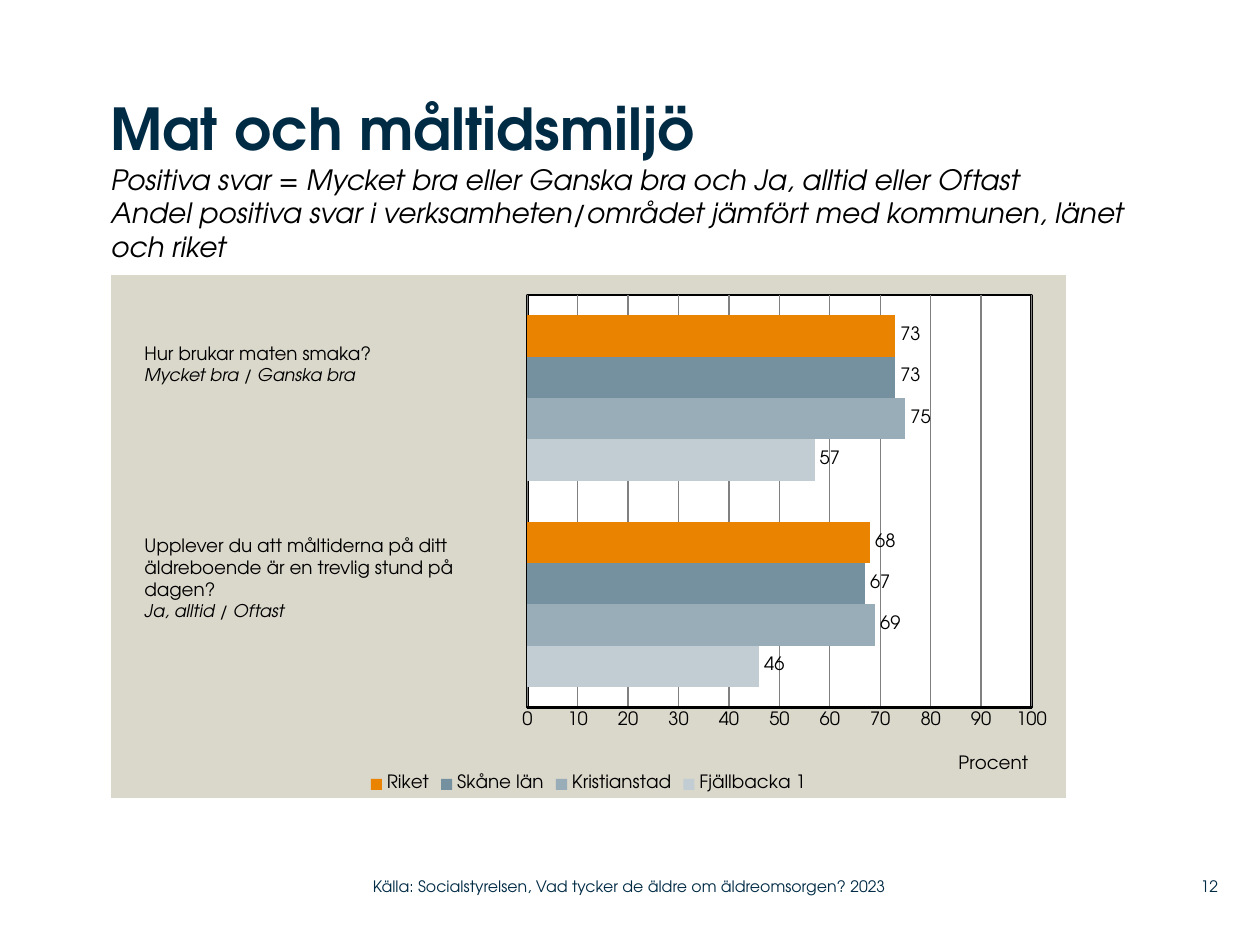
from lxml import etree
from pptx import Presentation, util as u
from pptx.chart.data import CategoryChartData
from pptx.dml.color import RGBColor
from pptx.enum import chart as ch, text
from pptx.oxml import parse_xml
from pptx.oxml.ns import nsdecls, qn

PX = u.Inches(1) // 126
FONT = "TeX Gyre Adventor"
NAVY, BLACK = "002B45", "000000"


def style(font, size, color=BLACK, bold=False, italic=False):
    font.name, font.size = FONT, u.Pt(size)
    font.bold, font.italic = bold, italic
    font.color.rgb = RGBColor.from_string(color)


def add_text(x, y, w, h, lines, inset=None, anchor=text.MSO_ANCHOR.TOP, align=None):
    """Add a box with one paragraph per (text, size, color, italic) line."""
    tf = s.shapes.add_textbox(x * PX, y * PX, w * PX, h * PX).text_frame
    tf.word_wrap, tf.vertical_anchor = True, anchor
    if inset is not None:
        tf.margin_left = tf.margin_right = tf.margin_top = tf.margin_bottom = inset
    for i, (line, size, color, italic) in enumerate(lines):
        p = tf.paragraphs[0] if i == 0 else tf.add_paragraph()
        p.text, p.alignment = line, align
        style(p.font, size, color, italic=italic)
    return tf


prs = Presentation()
prs.slide_width, prs.slide_height = 1260 * PX, 945 * PX
s = prs.slides.add_slide(prs.slide_layouts[6])

# Chart
series = [
    ("Fjällbacka 1", (46, 57), "C2CDD3"),
    ("Kristianstad", (69, 75), "99ADB9"),
    ("Skåne län", (67, 73), "75909F"),
    ("Riket", (68, 73), "E98300"),
]
data = CategoryChartData()
data.categories = ["1", "2"]
for name, values, _ in series:
    data.add_series(name, values)
chart = s.shapes.add_chart(ch.XL_CHART_TYPE.BAR_CLUSTERED, 111 * PX, 275 * PX,
                           955 * PX, 523 * PX, data).chart
style(chart.font, 10.5)
chart.has_title = False
chart.has_legend = True
chart.legend.position = ch.XL_LEGEND_POSITION.BOTTOM
chart.legend.include_in_layout = False
style(chart.legend.font, 10.5)

plot = chart.plots[0]
plot.gap_width, plot.overlap, plot.vary_by_categories = 100, 0, False
for ser, (_, _, color) in zip(plot.series, series):
    ser.format.fill.solid()
    ser.format.fill.fore_color.rgb = RGBColor.from_string(color)
    ser.data_labels.show_value = True
    ser.data_labels.position = ch.XL_LABEL_POSITION.OUTSIDE_END
    style(ser.data_labels.font, 10.5)

chart.category_axis.visible = False
axis = chart.value_axis
axis.minimum_scale, axis.maximum_scale, axis.major_unit = 0, 100, 10
axis.major_tick_mark = axis.minor_tick_mark = ch.XL_TICK_MARK.NONE
style(axis.tick_labels.font, 10.5)
axis.format.line.color.rgb = RGBColor.from_string(BLACK)
axis.format.line.width = u.Pt(2)
axis.has_major_gridlines = True
axis.major_gridlines.format.line.color.rgb = RGBColor.from_string("808080")
axis.major_gridlines.format.line.width = u.Pt(0.75)
axis.axis_title.text_frame.text = "Procent"
style(axis.axis_title.text_frame.paragraphs[0].font, 10.5)


def set_layout(parent, **values):
    """Give a chart part a manual layout, in fractions of the chart."""
    layout = parent.find(qn("c:layout"))
    if layout is None:
        layout = etree.Element(qn("c:layout"))
        parent.insert(1 if parent.find(qn("c:tx")) is not None else 0, layout)
    for child in list(layout):
        layout.remove(child)
    manual = etree.SubElement(layout, qn("c:manualLayout"))
    for key, value in values.items():
        etree.SubElement(manual, qn("c:" + key)).set("val", str(value))


area = chart._chartSpace.chart.plotArea
set_layout(area, layoutTarget="inner", xMode="edge", yMode="edge",
           x=0.436, y=0.038, w=0.528, h=0.789)
set_layout(axis.axis_title._element, xMode="edge", yMode="edge", x=0.884, y=0.91)

FILL = '<c:spPr %s><a:solidFill><a:srgbClr val="%s"/></a:solidFill>%s</c:spPr>'
NS = nsdecls("c", "a")
border = '<a:ln w="19050"><a:solidFill><a:srgbClr val="000000"/></a:solidFill></a:ln>'
area.append(parse_xml(FILL % (NS, "FFFFFF", border)))
chart._chartSpace.chart.addnext(
    parse_xml(FILL % (NS, "DAD7CB", "<a:ln><a:noFill/></a:ln>")))

# Title with explanation
tf = add_text(111, 93, 1061, 181, [("Mat och måltidsmiljö", 33, NAVY, False)], inset=0)
p = tf.paragraphs[0]
p.font.bold = True
for line in ("Positiva svar = Mycket bra eller Ganska bra och Ja, alltid eller Oftast",
             "Andel positiva svar i verksamheten/området jämfört med kommunen, "
             "länet och riket"):
    p.add_line_break()
    r = p.add_run()
    r.text = line
    style(r.font, 16, italic=True)

# Questions beside the bars
add_text(132, 336, 349, 79, [
    ("Hur brukar maten smaka?", 10.5, BLACK, False),
    ("Mycket bra / Ganska bra", 10, BLACK, True)])
add_text(132, 528, 349, 123, [
    ("Upplever du att måltiderna på ditt äldreboende är en trevlig stund på",
     10.5, BLACK, False),
    ("dagen?", 10.5, BLACK, False),
    ("Ja, alltid / Oftast", 10, BLACK, True)])

# Footer
add_text(1159, 868, 59, 37, [("12", 9, NAVY, False)], 0,
         text.MSO_ANCHOR.MIDDLE, text.PP_ALIGN.RIGHT)
add_text(373, 868, 558, 37,
         [("Källa: Socialstyrelsen, Vad tycker de äldre om äldreomsorgen? 2023",
           9, NAVY, False)], 0, text.MSO_ANCHOR.MIDDLE)

prs.save("out.pptx")
